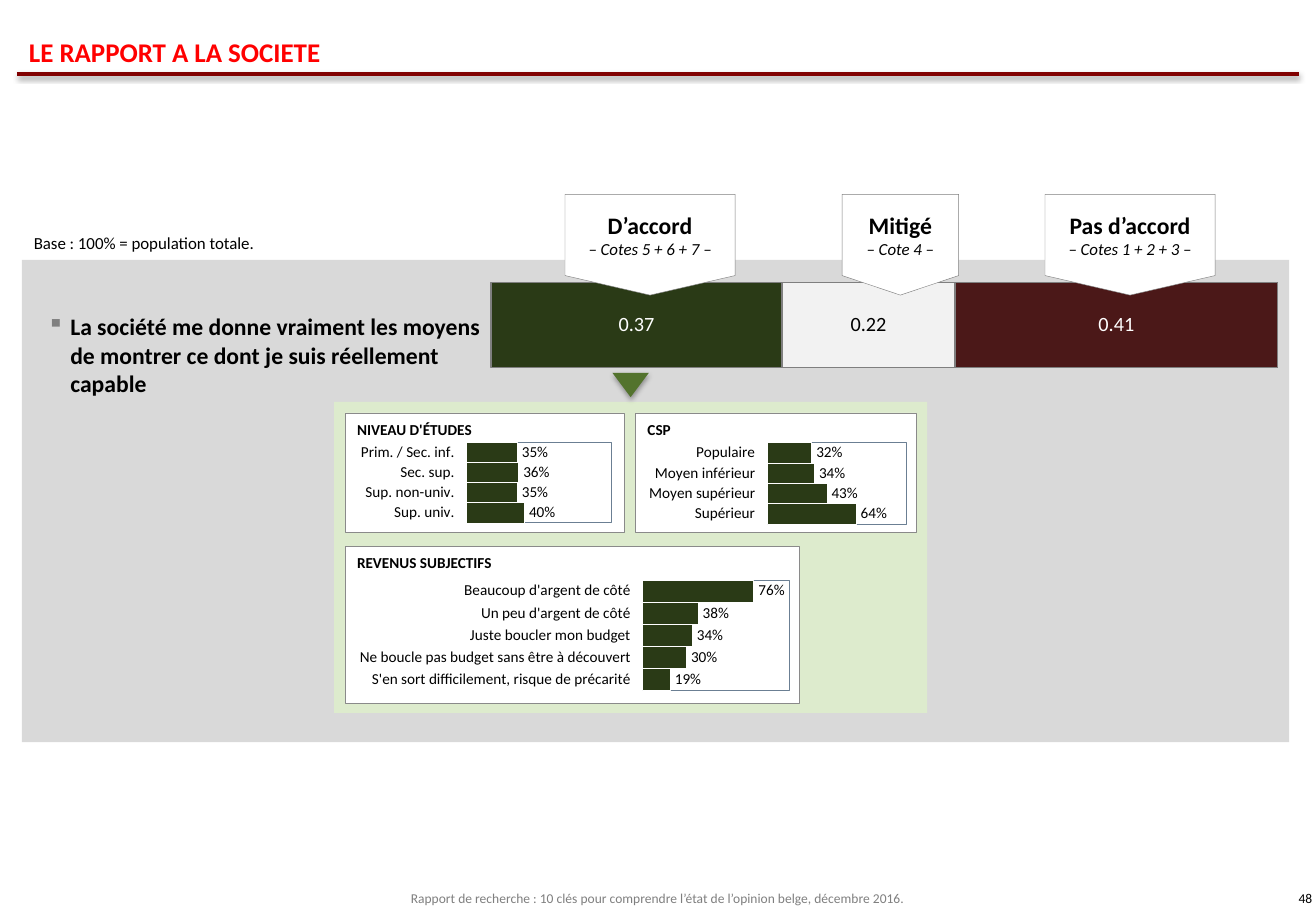
"""Build the survey slide on how people relate to society."""
from dataclasses import dataclass
from typing import Optional

from lxml.etree import SubElement as Sub
from pptx import Presentation
from pptx.chart.data import CategoryChartData as Data
from pptx.dml.color import RGBColor as RGB
from pptx.enum.chart import XL_CHART_TYPE as Kind
from pptx.enum.chart import XL_LABEL_POSITION as Spot
from pptx.enum.chart import XL_TICK_LABEL_POSITION as Tick
from pptx.enum.chart import XL_TICK_MARK as Mark
from pptx.enum.shapes import MSO_CONNECTOR as Link
from pptx.enum.shapes import MSO_SHAPE as Form
from pptx.enum.text import MSO_ANCHOR as Anchor
from pptx.enum.text import PP_ALIGN as Align
from pptx.oxml.ns import qn
from pptx.util import Pt

SCALE = 9144
FONT = "Calibri"
HEX = {
    "white": "FFFFFF", "black": "000000", "red": "FF0000", "rule": "800000",
    "band": "D9D9D9", "mint": "DDEBCD", "green": "2A3A16", "pale": "F2F2F2",
    "wine": "4B1818", "gray": "7F7F7F", "edge": "8A8A8A", "leaf": "53732D",
    "frame": "6B7F93", "bullet": "808080",
}
Box = tuple[int, int, int, int]
Plot = tuple[float, float, float, float]


@dataclass
class Run:
    text: str
    size: int
    color: str = "black"
    bold: bool = False
    slant: bool = False


@dataclass
class Note:
    box: Box
    run: Run
    align: Align = Align.LEFT
    anchor: Anchor = Anchor.TOP
    pad: Optional[int] = None
    wrap: bool = True


@dataclass
class Flag:
    left: int
    width: int
    head: str
    sub: str


@dataclass
class Part:
    value: float
    fill: str
    ink: str


@dataclass
class Panel:
    box: Box
    head: str
    area: Box
    plot: Plot
    bars: dict[str, float]


FLAGS = [
    Flag(860, 140, "Pas d’accord", "– Cotes 1 + 2 + 3 –"),
    Flag(693, 96, "Mitigé", "– Cote 4 –"),
    Flag(465, 140, "D’accord", "– Cotes 5 + 6 + 7 –"),
]
PARTS = [
    Part(0.37, "green", "white"),
    Part(0.22, "pale", "black"),
    Part(0.41, "wine", "white"),
]
PANELS = [
    Panel((284, 340, 230, 98), "NIVEAU D'ÉTUDES", (239, 354, 284, 86),
          (0.51, 0.12, 0.42, 0.77),
          {"Prim. / Sec. inf.": 0.35, "Sec. sup.": 0.36,
           "Sup. non-univ.": 0.35, "Sup. univ.": 0.4}),
    Panel((284, 450, 374, 129), "REVENUS SUBJECTIFS", (176, 468, 483, 118),
          (0.73, 0.08, 0.25, 0.77),
          {"Beaucoup d'argent de côté": 0.76, "Un peu d'argent de côté": 0.38,
           "Juste boucler mon budget": 0.34,
           "Ne boucle pas budget sans être à découvert": 0.3,
           "S'en sort difficilement, risque de précarité": 0.19}),
    Panel((523, 340, 231, 98), "CSP", (450, 354, 318, 87),
          (0.57, 0.12, 0.36, 0.77),
          {"Populaire": 0.32, "Moyen inférieur": 0.34,
           "Moyen supérieur": 0.43, "Supérieur": 0.64}),
]
TITLE = Note((14, 24, 1055, 37), Run("LE RAPPORT A LA SOCIETE", 16, "red", True),
             anchor=Anchor.BOTTOM)
CLAIM = Note((29, 252, 377, 81), Run(
    "La société me donne vraiment les moyens de montrer ce dont je suis "
    "réellement capable", 14, bold=True))
BASE = Note((18, 187, 207, 27), Run("Base : 100% = population totale.", 10), wrap=False)
FEET = [
    Note((0, 729, 1083, 21), Run(
        "Rapport de recherche\u00a0: 10 clés pour comprendre l’état de l’opinion "
        "belge, décembre 2016.", 8, "gray"), Align.CENTER, Anchor.MIDDLE, 4),
    Note((831, 729, 253, 21), Run("48", 8), Align.RIGHT, Anchor.MIDDLE, 4),
]


def px(*marks: int) -> list[int]:
    return [mark * SCALE for mark in marks]


def tint(name: str) -> RGB:
    return RGB.from_string(HEX[name])


def paint(form, fill: str, edge: Optional[str], width: float = 0.25) -> None:
    form.fill.solid()
    form.fill.fore_color.rgb = tint(fill)
    if edge:
        form.line.color.rgb = tint(edge)
        form.line.width = Pt(width)
    else:
        form.line.fill.background()


def style(font, size: int, color: str = "black") -> None:
    font.name, font.size = FONT, Pt(size)
    font.color.rgb = tint(color)


def write(para, run: Run) -> None:
    item = para.add_run()
    item.text = run.text
    style(item.font, run.size, run.color)
    item.font.bold, item.font.italic = run.bold, run.slant


def shade(effect, blur: float, gap: float, alpha: int) -> None:
    cast = Sub(effect, qn("a:outerShdw"), blurRad=str(Pt(blur)), dist=str(Pt(gap)),
               dir="5400000", rotWithShape="0")
    color = Sub(cast, qn("a:srgbClr"), val=HEX["black"])
    Sub(color, qn("a:alpha"), val=str(alpha * 1000))


def add_form(slide, kind: Form, box: Box, fill: str, edge: Optional[str] = None):
    form = slide.shapes.add_shape(kind, *px(*box))
    form.shadow.inherit = False
    paint(form, fill, edge)
    return form


def add_note(slide, note: Note):
    frame = slide.shapes.add_textbox(*px(*note.box)).text_frame
    frame.word_wrap, frame.vertical_anchor = note.wrap, note.anchor
    if note.pad is not None:
        pad = note.pad * SCALE
        frame.margin_left = frame.margin_right = pad
        frame.margin_top = frame.margin_bottom = pad
    para = frame.paragraphs[0]
    para.alignment = note.align
    write(para, note.run)
    return para


def add_rule(slide) -> None:
    rule = slide.shapes.add_connector(Link.STRAIGHT, *px(14, 61, 1069, 61))
    rule.line.color.rgb = tint("rule")
    rule.line.width = Pt(2)
    shade(Sub(rule._element.spPr, qn("a:effectLst")), 3.1, 1.6, 38)


def add_claim(slide) -> None:
    props = add_note(slide, CLAIM)._p.get_or_add_pPr()
    props.set("marL", str(19 * SCALE))
    props.set("indent", str(-19 * SCALE))
    Sub(Sub(props, qn("a:buClr")), qn("a:srgbClr"), val=HEX["bullet"])
    Sub(props, qn("a:buChar"), char="▪")


def add_flag(slide, flag: Flag) -> None:
    form = add_form(slide, Form.DOWN_ARROW, (flag.left, 160, flag.width, 83),
                    "white", "gray")
    form.adjustments[0], form.adjustments[1] = 1, 0.194
    frame = form.text_frame
    frame.word_wrap, frame.vertical_anchor = True, Anchor.MIDDLE
    lines = [Run(flag.head, 14, bold=True), Run(flag.sub, 10, slant=True)]
    for para, run in zip((frame.paragraphs[0], frame.add_paragraph()), lines):
        para.alignment = Align.CENTER
        write(para, run)


def add_graph(slide, kind: Kind, box: Box, data: Data, plot: Plot, gap: int):
    chart = slide.shapes.add_chart(kind, *px(*box), data).chart
    chart.has_legend = chart.has_title = False
    style(chart.font, 18)
    chart.plots[0].gap_width = gap
    chart.plots[0].vary_by_categories = False
    chart.category_axis.reverse_order = True
    axis = chart.value_axis
    axis.minimum_scale, axis.maximum_scale = 0, 1
    axis.has_major_gridlines = axis.visible = False
    area = chart._chartSpace.chart.plotArea
    for old in area.findall(qn("c:layout")):
        area.remove(old)
    layout = Sub(area, qn("c:layout"))
    area.insert(0, layout)
    spot = Sub(layout, qn("c:manualLayout"))
    Sub(spot, qn("c:layoutTarget"), val="inner")
    for key in "xy":
        Sub(spot, qn(f"c:{key}Mode"), val="edge")
    for key, size in zip("xywh", plot):
        Sub(spot, qn(f"c:{key}"), val=str(size))
    return chart


def add_label(row, size: int, ink: str, form: str, spot: Spot) -> None:
    label = row.data_labels
    label.show_value, label.position = True, spot
    label.number_format, label.number_format_is_linked = form, False
    style(label.font, size, ink)


def add_stack(slide) -> None:
    data = Data()
    data.categories = ["1", "2", "3"]
    for num, part in enumerate(PARTS, 1):
        data.add_series(f"Series {num}", [part.value, None, None])
    chart = add_graph(slide, Kind.BAR_STACKED, (384, 199, 668, 411), data,
                      (0.03, 0, 0.97, 1), 95)
    chart.plots[0].overlap = 100
    chart.category_axis.visible = False
    for row, part in zip(chart.series, PARTS):
        paint(row.format, part.fill, "gray", 0.75)
        add_label(row, 12, part.ink, "General", Spot.CENTER)


def add_panel(slide, panel: Panel) -> None:
    add_form(slide, Form.RECTANGLE, panel.box, "white", "edge")
    data = Data()
    data.categories = list(panel.bars)
    data.add_series("Series 1", list(panel.bars.values()))
    chart = add_graph(slide, Kind.BAR_CLUSTERED, panel.area, data, panel.plot, 0)
    axis = chart.category_axis
    axis.major_tick_mark = axis.minor_tick_mark = Mark.NONE
    axis.tick_label_position = Tick.LOW
    axis.format.line.fill.background()
    style(axis.tick_labels.font, 9)
    row = chart.series[0]
    paint(row.format, "green", "white")
    add_label(row, 9, "black", "0%", Spot.OUTSIDE_END)
    props = Sub(chart._chartSpace.chart.plotArea, qn("c:spPr"))
    line = Sub(props, qn("a:ln"), w=str(Pt(0.5)))
    for node, name in ((props, "white"), (line, "frame")):
        fill = Sub(node, qn("a:solidFill"))
        Sub(fill, qn("a:srgbClr"), val=HEX[name])
    props.append(line)
    left, top, width, _ = panel.box
    add_note(slide, Note((left, top + 1, width, 25), Run(panel.head, 9, bold=True),
                         wrap=False))


def main() -> None:
    deck = Presentation()
    deck.slide_width, deck.slide_height = px(1083, 750)
    slide = deck.slides.add_slide(deck.slide_layouts[6])
    add_rule(slide)
    add_form(slide, Form.RECTANGLE, (18, 214, 1043, 397), "band")
    add_stack(slide)
    add_form(slide, Form.RECTANGLE, (275, 331, 488, 256), "mint")
    for note in (TITLE, *FEET, BASE):
        add_note(slide, note)
    add_claim(slide)
    for flag in FLAGS:
        add_flag(slide, flag)
    arrow = add_form(slide, Form.ISOSCELES_TRIANGLE, (504, 307, 30, 20), "leaf")
    arrow._element.spPr.xfrm.set("flipV", "1")
    shade(arrow._element.spPr.find(qn("a:effectLst")), 3.1, 1.8, 35)
    for panel in PANELS:
        add_panel(slide, panel)
    deck.save("out.pptx")


if __name__ == "__main__":
    main()
